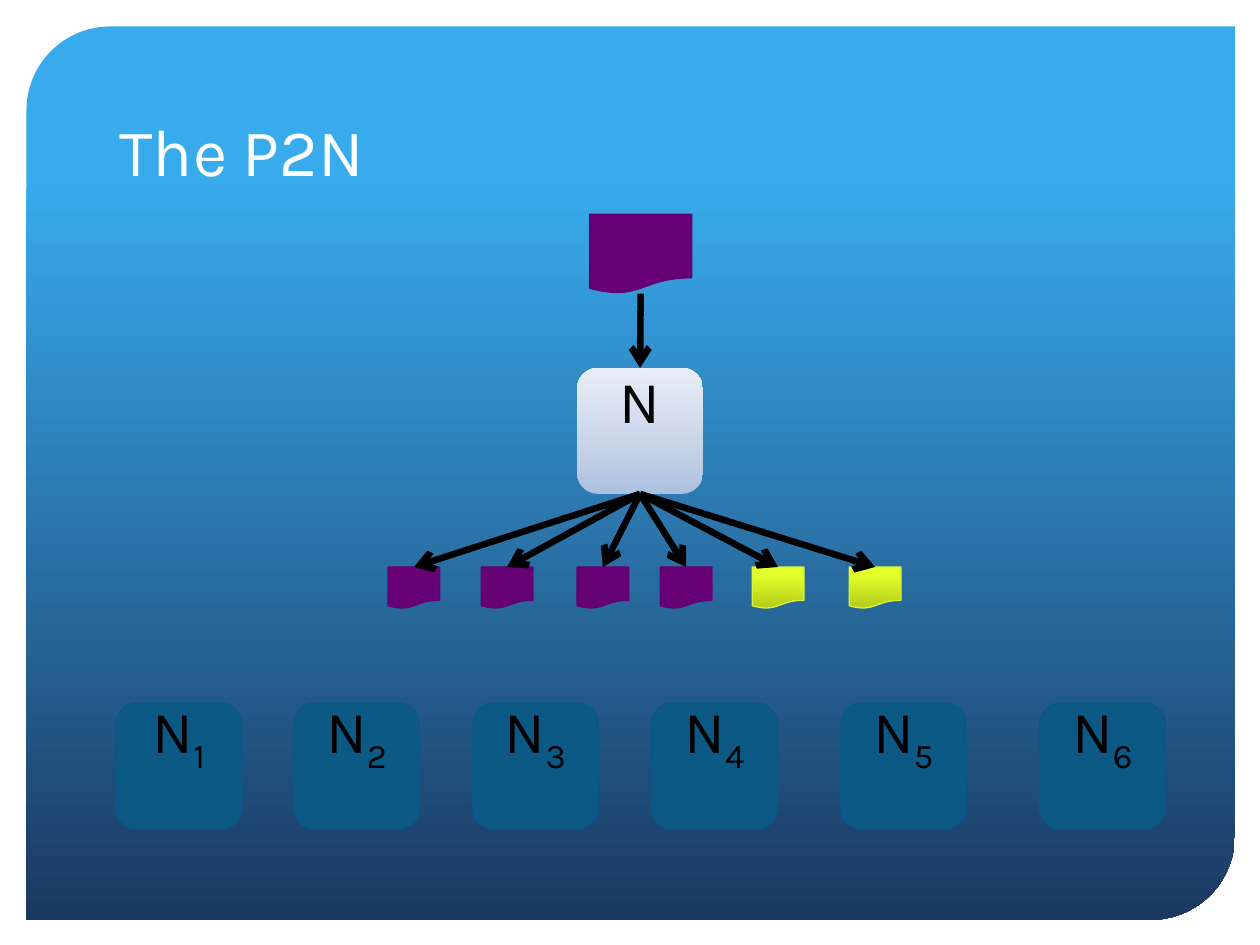
"""Build the P2N slide: a document split by node N into parts for six nodes."""
from copy import deepcopy

from lxml import etree
from pptx import Presentation
from pptx.dml.color import RGBColor
from pptx.enum.shapes import MSO_CONNECTOR, MSO_SHAPE
from pptx.enum.text import MSO_ANCHOR, MSO_AUTO_SIZE, PP_ALIGN
from pptx.oxml.ns import qn
from pptx.util import Inches, Pt

PANEL = MSO_SHAPE.ROUND_2_DIAG_RECTANGLE
DOC = MSO_SHAPE.FLOWCHART_DOCUMENT
BOX = MSO_SHAPE.ROUNDED_RECTANGLE
STRAIGHT = MSO_CONNECTOR.STRAIGHT
MIDDLE, BOTTOM = MSO_ANCHOR.MIDDLE, MSO_ANCHOR.BOTTOM
CENTER, LEFT = PP_ALIGN.CENTER, PP_ALIGN.LEFT
NO_FIT = MSO_AUTO_SIZE.NONE
TOP_SITE, BOTTOM_SITE = 0, 2

FONT = "Karla"
BLACK, WHITE = "000000", "FFFFFF"
PURPLE, PURPLE_LINE = "660075", "640072"
YELLOW_LINE = "DBF437"
TEAL, TEAL_LINE = "0C5986", "095886"
SKY = [(0.17, "38ABED"), (1, "1B3861")]
YELLOW = [(0, "B4CB19"), (0.8, "E3FF29"), (1, "E3FF2B")]
SILVER = [(0, "ABC0E0"), (0.35, "C5D3E8"), (1, "E9EEF7")]
DOWN, UP = 270, 90


def rgb(value):
    return RGBColor.from_string(value)


def add_run(p, text, size=34, color=BLACK, baseline=None):
    r = p.add_run()
    r.text = text
    r.font.name = FONT
    r.font.size = Pt(size)
    r.font.color.rgb = rgb(color)
    if baseline is not None:
        r.font._element.set("baseline", str(baseline))


class Deck:
    """Holds the presentation, its current slide and the shared style."""

    def __init__(self, width, height):
        self.prs = Presentation()
        self.prs.slide_width, self.prs.slide_height = Inches(width), Inches(height)
        self.s = self.prs.slides.add_slide(self.prs.slide_layouts[5])

    def title(self, text, *at):
        sp = self.s.shapes.title
        sp.left, sp.top, sp.width, sp.height = map(Inches, at)
        tf = sp.text_frame
        tf.auto_size, tf.vertical_anchor = NO_FIT, BOTTOM
        tf.paragraphs[0].alignment = LEFT
        add_run(tf.paragraphs[0], text, 38, WHITE)

    def gradient(self, sp, stops, angle):
        sp.fill.gradient()
        sp.fill.gradient_angle = angle
        gs_list = sp._element.spPr.find(qn("a:gradFill")).find(qn("a:gsLst"))
        for _ in stops[2:]:
            gs_list.append(deepcopy(gs_list[0]))
        for stop, (position, color) in zip(sp.fill.gradient_stops, stops):
            stop.position = position
            stop.color.rgb = rgb(color)

    def shape(self, kind, *at, fill, line=None, angle=UP):
        sp = self.s.shapes.add_shape(kind, *map(Inches, at))
        sp.shadow.inherit = False
        if isinstance(fill, list):
            self.gradient(sp, fill, angle)
        else:
            sp.fill.solid()
            sp.fill.fore_color.rgb = rgb(fill)
        if line:
            sp.line.color.rgb = rgb(line)
            sp.line.width = Pt(0.75)
        else:
            sp.line.fill.background()
        return sp

    def panel(self, *at):
        sp = self.shape(PANEL, *at, fill=SKY, angle=DOWN)
        sp.adjustments[0], sp.adjustments[1] = 0.094, 0
        self.s.shapes.title._element.addprevious(sp._element)

    def node(self, left, top, subscript="", **style):
        sp = self.shape(BOX, left, top, 1, 1, **style)
        tf = sp.text_frame
        tf.vertical_anchor = MIDDLE
        tf.margin_top, tf.margin_bottom = 0, Inches(0.5)
        p = tf.paragraphs[0]
        p.alignment = CENTER
        add_run(p, "N")
        if subscript:
            add_run(p, subscript, baseline=-25000)
        return sp

    def arrow(self, start, end):
        c = self.s.shapes.add_connector(STRAIGHT, 0, 0, 0, 0)
        c.begin_connect(start, BOTTOM_SITE)
        c.end_connect(end, TOP_SITE)
        c.line.color.rgb = rgb(BLACK)
        c.line.width = Pt(3.75)
        etree.SubElement(c.line._get_or_add_ln(), qn("a:tailEnd"), type="arrow")
        etree.SubElement(c._element.spPr, qn("a:effectLst"))


def main():
    deck = Deck(10, 7.5)
    deck.panel(0.21, 0.21, 9.59, 7.09)
    deck.title("The P2N", 0.85, 0.42, 8.29, 1.14)

    source = deck.shape(DOC, 4.68, 1.7, 0.81, 0.63, fill=PURPLE, line=PURPLE_LINE)
    splitter = deck.node(4.58, 2.92, fill=SILVER)
    purple = dict(fill=PURPLE, line=PURPLE_LINE)
    yellow = dict(fill=YELLOW, line=YELLOW_LINE)
    lefts = [3.08, 3.82, 4.58, 5.24, 5.97, 6.74]
    parts = [deck.shape(DOC, left, 4.5, 0.41, 0.33, **style)
             for left, style in zip(lefts, [purple] * 4 + [yellow] * 2)]

    deck.arrow(source, splitter)
    for part in parts:
        deck.arrow(splitter, part)
    for i, left in enumerate([0.92, 2.33, 3.75, 5.17, 6.67, 8.25], 1):
        deck.node(left, 5.58, str(i), fill=TEAL, line=TEAL_LINE)

    deck.prs.save("out.pptx")


if __name__ == "__main__":
    main()
